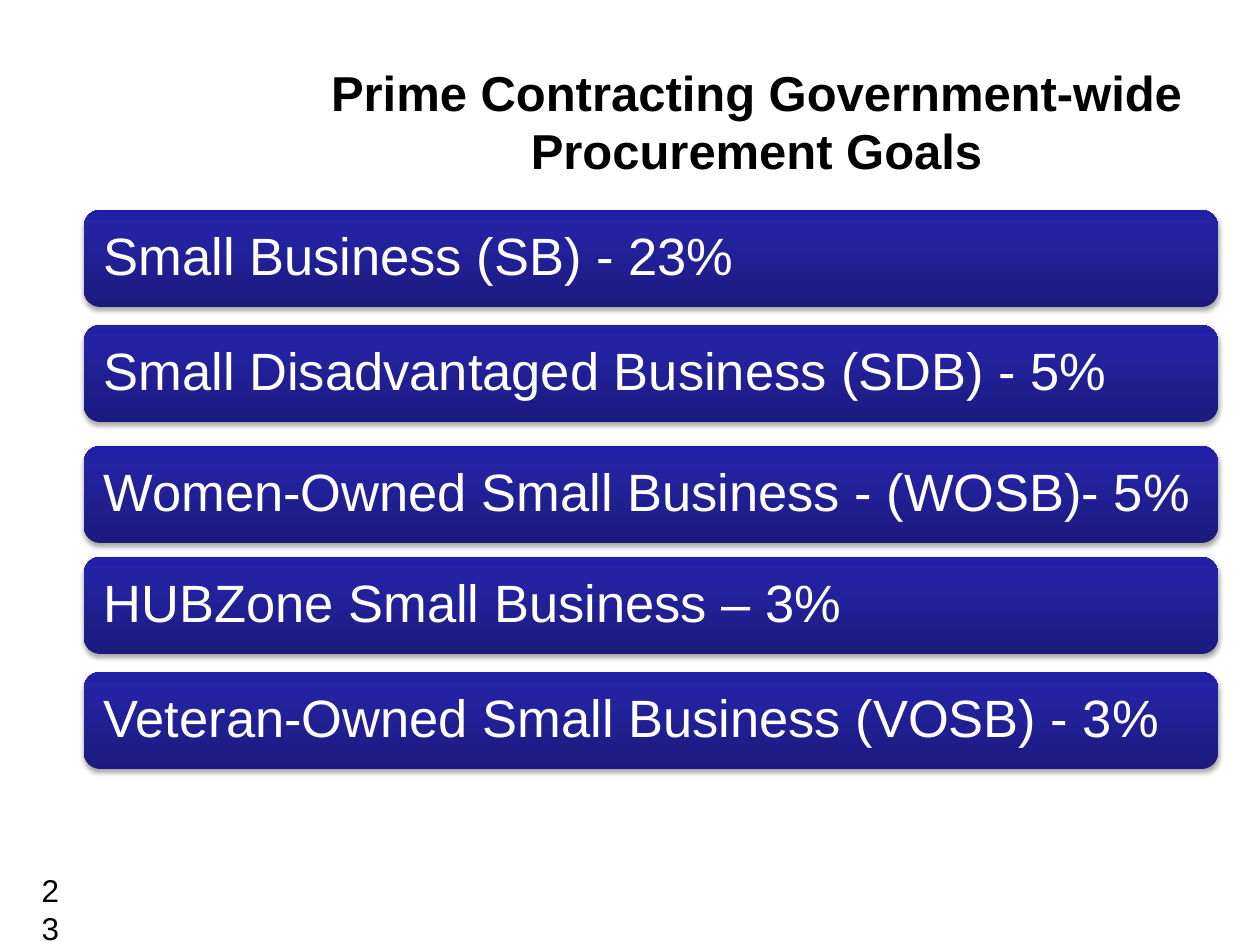
from lxml.etree import SubElement
from pptx import Presentation
from pptx.dml.color import RGBColor
from pptx.enum.shapes import MSO_SHAPE
from pptx.enum.text import MSO_ANCHOR, PP_ALIGN
from pptx.oxml.ns import qn
from pptx.util import Emu, Pt

BLACK = RGBColor(0x00, 0x00, 0x00)
WHITE = RGBColor(0xFF, 0xFF, 0xFF)
NAVY = RGBColor(0x1B, 0x1B, 0x7E)
BLUE = RGBColor(0x23, 0x23, 0xA3)
BRIGHT = RGBColor(0x20, 0x20, 0xA6)


def px(n):
    return Emu(round(n * 914400 / 126))


def add_run(p, text, size, color, bold=False):
    r = p.add_run()
    r.text = text
    r.font.name = "Arial"
    r.font.size = Pt(size)
    r.font.bold = bold
    r.font.color.rgb = color


prs = Presentation()
prs.slide_width, prs.slide_height = px(1260), px(945)
s = prs.slides.add_slide(prs.slide_layouts[6])

# Title
sp = s.shapes.add_textbox(px(305), px(53), px(903), px(136))
tf = sp.text_frame
tf.word_wrap = True
tf.vertical_anchor = MSO_ANCHOR.MIDDLE
p = tf.paragraphs[0]
p.alignment = PP_ALIGN.CENTER
add_run(p, "Prime Contracting Government-wide Procurement Goals", 28, BLACK, True)

# Goal bars
goals = [
    (210, "Small Business (SB) - 23%"),
    (325, "Small Disadvantaged Business (SDB) - 5%"),
    (446, "Women-Owned Small Business - (WOSB)- 5%"),
    (557, "HUBZone Small Business – 3%"),
    (672, "Veteran-Owned Small Business (VOSB) - 3%"),
]
for top, goal in goals:
    sp = s.shapes.add_shape(MSO_SHAPE.ROUNDED_RECTANGLE, px(84), px(top), px(1134), px(97))
    sp.line.fill.background()

    # Gradient from the dark bottom edge up
    sp.fill.gradient()
    sp.fill.gradient_angle = 90
    stops = sp._element.spPr.find(qn("a:gradFill")).find(qn("a:gsLst"))
    stops.clear()
    for pos, color in ((0, NAVY), (80, BLUE), (100, BRIGHT)):
        stop = SubElement(stops, qn("a:gs"), pos=str(pos * 1000))
        SubElement(stop, qn("a:srgbClr"), val=str(color))

    # Soft shadow below
    sp.shadow.inherit = False
    effects = sp._element.spPr.find(qn("a:effectLst"))
    shadow = SubElement(effects, qn("a:outerShdw"), blurRad=str(Pt(3.1)), dist=str(Pt(1.8)),
                        dir="5400000", rotWithShape="0")
    shade = SubElement(shadow, qn("a:srgbClr"), val=str(BLACK))
    SubElement(shade, qn("a:alpha"), val="35000")

    tf = sp.text_frame
    tf.word_wrap = True
    tf.vertical_anchor = MSO_ANCHOR.MIDDLE
    tf.margin_left = tf.margin_right = tf.margin_top = tf.margin_bottom = px(15)
    p = tf.paragraphs[0]
    p.alignment = PP_ALIGN.LEFT
    p.line_spacing = 0.9
    add_run(p, goal, 30, WHITE)

# Page number
sp = s.shapes.add_shape(MSO_SHAPE.OVAL, px(20), px(856), px(63), px(63))
sp.shadow.inherit = False
sp.fill.background()
sp.line.fill.background()
tf = sp.text_frame
tf.word_wrap = True
tf.vertical_anchor = MSO_ANCHOR.TOP
p = tf.paragraphs[0]
p.alignment = PP_ALIGN.LEFT
add_run(p, "23", 18, BLACK)

prs.save("out.pptx")
